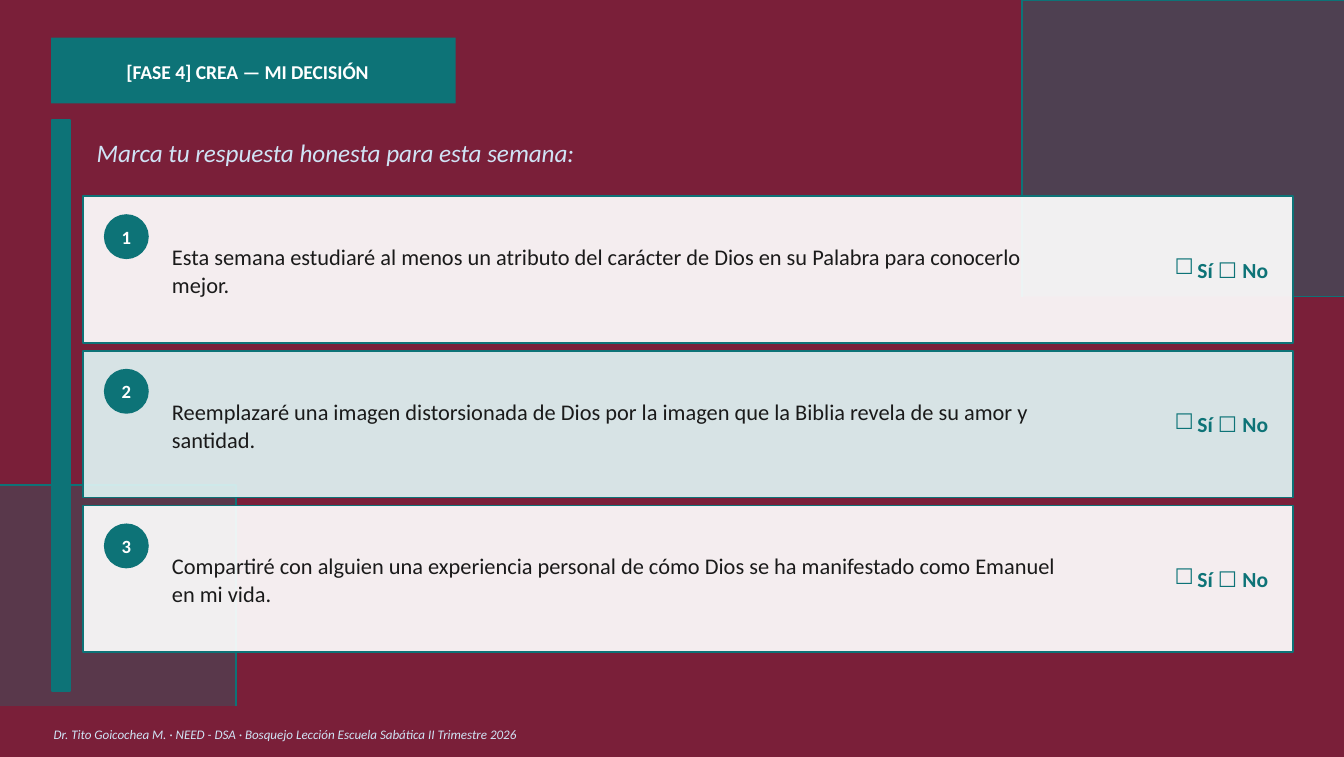
from collections import namedtuple

from lxml import etree
from pptx import Presentation
from pptx.dml.color import RGBColor
from pptx.enum.shapes import MSO_SHAPE
from pptx.enum.text import MSO_ANCHOR, PP_ALIGN
from pptx.oxml.ns import qn
from pptx.util import Inches, Pt

RECTANGLE, OVAL = MSO_SHAPE.RECTANGLE, MSO_SHAPE.OVAL
TOP, MIDDLE = MSO_ANCHOR.TOP, MSO_ANCHOR.MIDDLE
LEFT, CENTER = PP_ALIGN.LEFT, PP_ALIGN.CENTER

WINE = RGBColor(0x7A, 0x1F, 0x39)
TEAL = RGBColor(0x0D, 0x73, 0x77)
WHITE = RGBColor(0xFF, 0xFF, 0xFF)
MINT = RGBColor(0xDF, 0xF4, 0xF4)
PALE_BLUE = RGBColor(0xD0, 0xE3, 0xF5)
INK = RGBColor(0x1A, 0x1A, 0x1A)

CELL = Inches(0.1)
COLUMNS, ROWS = 100, 56.3
CARD_HEIGHT, CARD_PITCH = 10.9, 11.5
CHECKBOX = "☐"
DECISIONS = [
    "Esta semana estudiaré al menos un atributo del carácter de Dios "
    "en su Palabra para conocerlo\vmejor.",
    "Reemplazaré una imagen distorsionada de Dios por la imagen que "
    "la Biblia revela de su amor y\vsantidad.",
    "Compartiré con alguien una experiencia personal de cómo Dios se "
    "ha manifestado como Emanuel\ven mi vida.",
]

Box = namedtuple("Box", "left top width height")


def cells(*lengths):
    """Convert grid cells to slide lengths."""
    return [round(length * CELL) for length in lengths]


def within(box, left, top, width, height):
    """Return a box placed relative to the corner of another."""
    return Box(box.left + left, box.top + top, width, height)


def add_block(slide, box, fill, line=None, opacity=100, preset=RECTANGLE):
    """Add a flat preset shape with an optional outline and opacity."""
    block = slide.shapes.add_shape(preset, *cells(*box))
    block.shadow.inherit = False
    block.fill.solid()
    block.fill.fore_color.rgb = fill
    if opacity < 100:
        color = block.fill._xPr.find(qn("a:solidFill"))[0]
        etree.SubElement(color, qn("a:alpha"), val=str(opacity * 1000))
    if line is None:
        block.line.fill.background()
    else:
        block.line.color.rgb = line
        block.line.width = Pt(1)
    return block


def add_edge(slide, points):
    """Draw an open teal outline through grid points."""
    start, *others = [cells(*point) for point in points]
    builder = slide.shapes.build_freeform(*start)
    builder.add_line_segments(others, close=False)
    edge = builder.convert_to_shape()
    edge.shadow.inherit = False
    edge.fill.background()
    edge.line.color.rgb = TEAL
    edge.line.width = Pt(1)


def style_font(font, size, color, bold=False, italic=False):
    """Apply the slide's typeface with the given look."""
    font.name, font.size = "Calibri", Pt(size)
    font.bold, font.italic = bold, italic
    font.color.rgb = color


def set_text(shape, text, size, color, bold=False, italic=False,
             align=LEFT, anchor=TOP, inset=(0, 0), wrap=True):
    """Fill a shape with one paragraph of evenly styled text."""
    frame = shape.text_frame
    frame.word_wrap = wrap
    frame.vertical_anchor = anchor
    frame.margin_left, frame.margin_top = cells(*inset)
    frame.margin_right = frame.margin_bottom = 0
    paragraph = frame.paragraphs[0]
    paragraph.text = text
    paragraph.alignment = align
    style_font(paragraph.font, size, color, bold, italic)
    return paragraph


def add_answer(slide, box):
    """Add the yes and no checkboxes."""
    frame = slide.shapes.add_textbox(*cells(*box)).text_frame
    frame.word_wrap = False
    frame.margin_left = frame.margin_right = frame.margin_bottom = 0
    frame.margin_top = Inches(0.03)
    paragraph = frame.paragraphs[0]
    properties = paragraph._p.get_or_add_pPr()
    properties.set("marL", str(Inches(0.19)))
    properties.set("indent", str(-Inches(0.17)))
    etree.SubElement(properties, qn("a:buChar"), char=CHECKBOX)
    tabs = etree.SubElement(properties, qn("a:tabLst"))
    etree.SubElement(tabs, qn("a:tab"), pos=str(Inches(0.19)), algn="l")
    for text, typeface in (("Sí ", "Calibri"), (CHECKBOX + " ", "Roboto"),
                           ("No", "Calibri")):
        run = paragraph.add_run()
        run.text = text
        style_font(run.font, 11.5, TEAL, bold=True)
        run.font.name = typeface


def add_backdrop(slide, box):
    """Paint the background, the corner panels and the side bar."""
    slide.background.fill.solid()
    slide.background.fill.fore_color.rgb = WINE
    right, bottom = box.width, box.height
    add_block(slide, within(box, 76.05, 0, right - 76.05, 22.05), TEAL, opacity=40)
    add_edge(slide, [(right, 0), (76.05, 0), (76.05, 22.05)])
    add_edge(slide, [(96.2, 22.05), (right, 22.05)])
    add_block(slide, within(box, 0, 36.1, 17.55, 16.5), TEAL, opacity=30)
    add_edge(slide, [(17.55, bottom), (17.55, 36.1), (0, 36.1)])
    add_block(slide, within(box, 3.9, 8.9, 1.3, 42.5), TEAL, TEAL)


def add_heading(slide, box):
    """Place the phase label and the title below it."""
    label = add_block(slide, within(box, 0, 0, 30.1, 4.9), TEAL)
    set_text(label, "[FASE 4] CREA — MI DECISIÓN", 10.5, WHITE, bold=True,
             anchor=MIDDLE, inset=(5.6, 0.2))
    title = slide.shapes.title
    title.left, title.top, title.width, title.height = cells(
        *within(box, 3.3, 7.1, 40, 2.6))
    set_text(title, "Marca tu respuesta honesta para esta semana:", 13.5,
             PALE_BLUE, italic=True, inset=(0.1, 0.3))


def add_card(slide, box, number, decision, fill):
    """Place one numbered decision with its answer."""
    add_block(slide, box, fill, TEAL, opacity=92)
    badge = add_block(slide, within(box, 1.6, 1.4, 3.2, 3.2), TEAL, TEAL,
                      preset=OVAL)
    set_text(badge, str(number), 10, WHITE, bold=True, align=CENTER,
             anchor=MIDDLE, wrap=False)
    statement = slide.shapes.add_textbox(*cells(*within(box, 6.5, 3.1, 72, 4.4)))
    paragraph = set_text(statement, decision, 12, INK, inset=(0.1, 0.3))
    paragraph.line_spacing = Pt(15)
    add_answer(slide, within(box, 81, 4.2, 7.6, 2.2))


def add_footer(slide, box):
    """Place the footer band and the credit line."""
    add_block(slide, box, WINE, WINE)
    credit = slide.shapes.add_textbox(*cells(*within(box, 3.9, 1.4, 45, 1.3)))
    set_text(credit, "Dr. Tito Goicochea M. · NEED - DSA · Bosquejo Lección "
             "Escuela Sabática II Trimestre 2026", 7, PALE_BLUE, italic=True,
             inset=(0.1, 0))


def main():
    """Build and save the decision slide."""
    deck = Presentation()
    deck.slide_width, deck.slide_height = cells(COLUMNS, ROWS)
    slide = deck.slides.add_slide(deck.slide_layouts[5])
    add_backdrop(slide, Box(0, 0, COLUMNS, ROWS))
    add_heading(slide, Box(3.8, 2.8, 40, 10))
    for index, decision in enumerate(DECISIONS):
        card = Box(6.2, 14.6 + index * CARD_PITCH, 90, CARD_HEIGHT)
        add_card(slide, card, index + 1, decision, MINT if index % 2 else WHITE)
    add_footer(slide, Box(0, 52.6, COLUMNS, ROWS - 52.6))
    deck.save("out.pptx")


if __name__ == "__main__":
    main()
